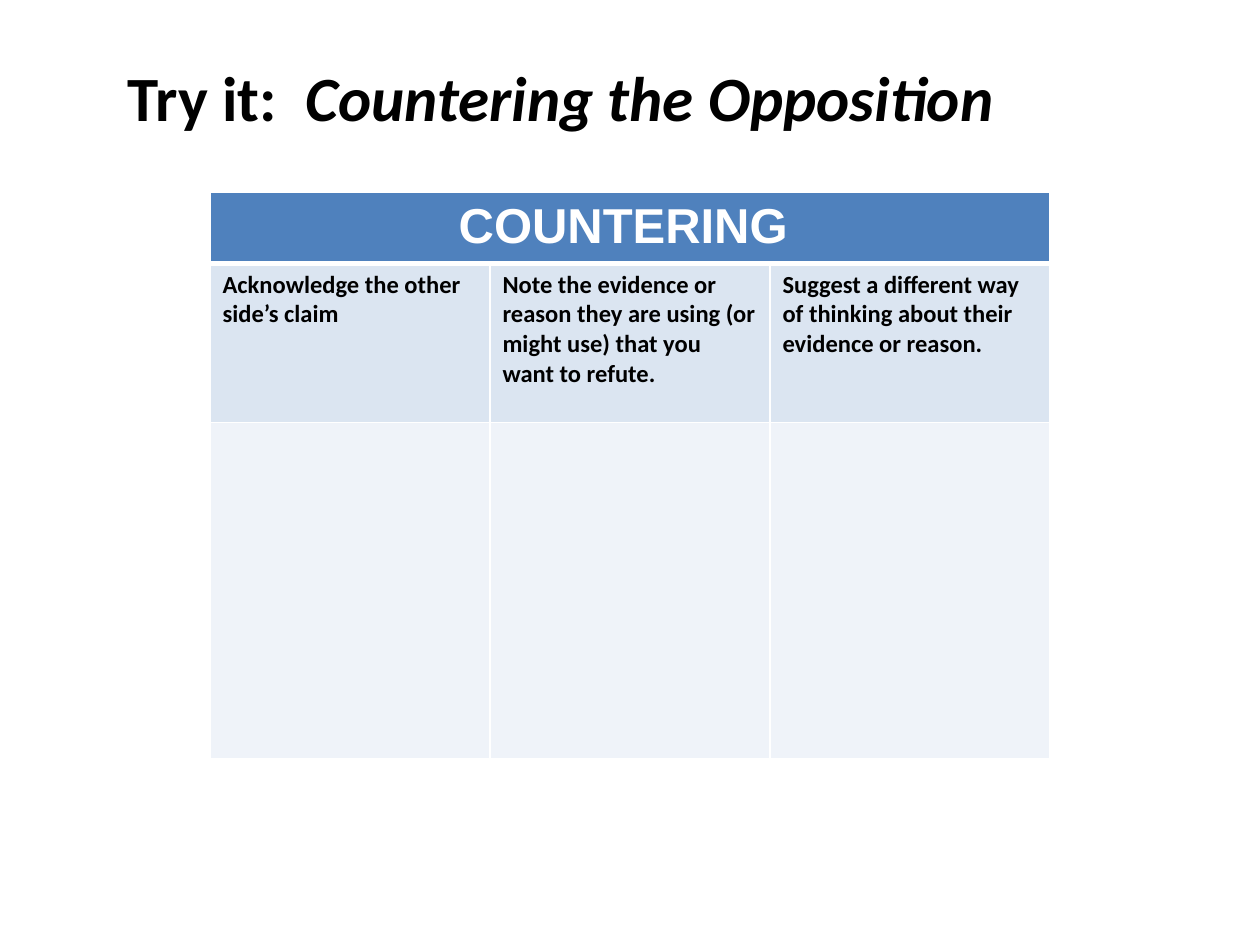
from dataclasses import dataclass
from typing import Any

from lxml.etree import SubElement
from pptx import Presentation
from pptx.dml.color import RGBColor
from pptx.enum.text import PP_ALIGN
from pptx.oxml.ns import qn
from pptx.util import Inches, Pt

WIDE, HIGH = Inches(10), Inches(7.5)
COLS, ROWS = 12, 18
WHITE, BLACK = "FFFFFF", "000000"


@dataclass(frozen=True)
class Run:
    text: str
    size: float
    font: str = "Calibri"
    tint: str = BLACK
    slant: bool = False


@dataclass(frozen=True)
class Band:
    rows: float
    fill: str
    runs: tuple[Run, ...] = ()
    edge: float = 1
    align: Any = PP_ALIGN.LEFT


TITLE = (Run("Try it:  ", 36), Run("Countering the Opposition", 36, slant=True))
STEPS = (
    "Acknowledge the other side’s claim",
    "Note the evidence or reason they are using (or might use) that you want to refute.",
    "Suggest a different way of thinking about their evidence or reason.",
)
BANDS = (
    Band(1.35, "4F81BD", (Run("COUNTERING ", 28, "Arial", WHITE),), 3, PP_ALIGN.CENTER),
    Band(3.03, "DBE5F1", tuple(Run(step, 14) for step in STEPS)),
    Band(6.4, "EFF3F9"),
)


def across(cols: float) -> int:
    """Turn grid columns into a length."""
    return round(WIDE * cols / COLS)


def down(rows: float) -> int:
    """Turn grid rows into a length."""
    return round(HIGH * rows / ROWS)


def paint(target: Any, tint: str) -> None:
    """Give a fill a solid colour."""
    target.solid()
    target.fore_color.rgb = RGBColor.from_string(tint)


def write(para: Any, run: Run) -> None:
    """Add one bold run to a paragraph."""
    part = para.add_run()
    part.text = run.text
    font = part.font
    font.name, font.size = run.font, Pt(run.size)
    font.bold, font.italic = True, run.slant
    paint(font.fill, run.tint)


def border(cell: Any, sides: dict[str, float]) -> None:
    """Draw white lines on the sides of a cell."""
    props = cell._tc.get_or_add_tcPr()
    for side, width in sides.items():
        line = SubElement(props, qn(f"a:ln{side}"), w=str(Pt(width)))
        SubElement(SubElement(line, qn("a:solidFill")), qn("a:srgbClr"), val=WHITE)


def head(slide: Any, runs: tuple[Run, ...]) -> None:
    """Place the title above the table."""
    box = slide.shapes.add_textbox(across(1.1), down(1), across(9.2), down(1.7))
    box.text_frame.word_wrap = True
    for run in runs:
        write(box.text_frame.paragraphs[0], run)


def chart(slide: Any, bands: tuple[Band, ...]) -> None:
    """Build the table from its bands."""
    count = len(STEPS)
    tall = down(sum(band.rows for band in bands))
    grid = slide.shapes.add_table(
        len(bands), count, across(2), down(3.67), across(8), tall
    ).table
    for col in grid.columns:
        col.width = across(8 / count)
    above = 1.0
    for row, band in enumerate(bands):
        grid.rows[row].height = down(band.rows)
        for col in range(count):
            cell = grid.cell(row, col)
            border(cell, {"L": 1, "R": 1, "T": above, "B": band.edge})
            paint(cell.fill, band.fill)
        for col, run in enumerate(band.runs):
            para = grid.cell(row, col).text_frame.paragraphs[0]
            para.alignment = band.align
            write(para, run)
        above = band.edge
    grid.cell(0, 0).merge(grid.cell(0, count - 1))


def main() -> None:
    """Make the slide and save it."""
    deck = Presentation()
    deck.slide_width, deck.slide_height = WIDE, HIGH
    slide = deck.slides.add_slide(deck.slide_layouts[6])
    chart(slide, BANDS)
    head(slide, TITLE)
    deck.save("out.pptx")


if __name__ == "__main__":
    main()
